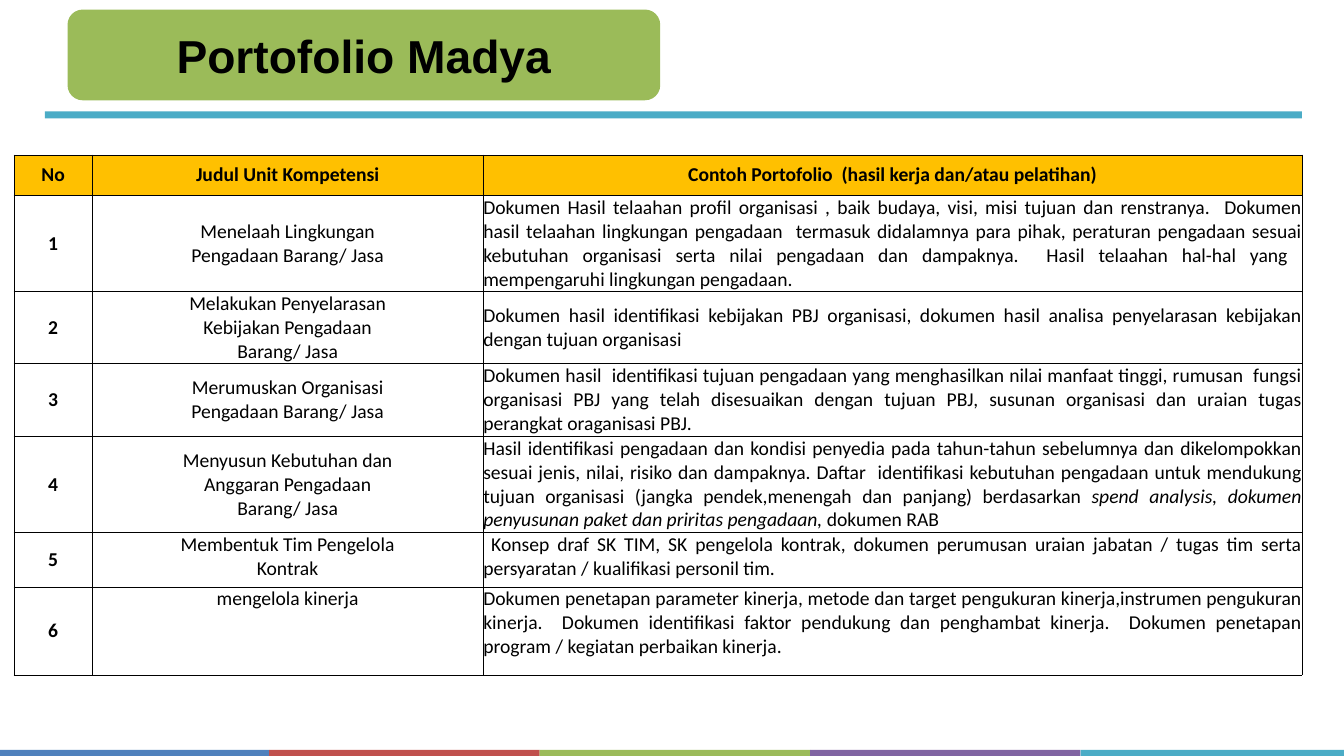
from dataclasses import dataclass

from lxml import etree
from pptx import Presentation
from pptx.dml.color import RGBColor
from pptx.enum.shapes import MSO_SHAPE
from pptx.enum.text import MSO_ANCHOR, PP_ALIGN
from pptx.oxml.ns import qn
from pptx.util import Pt

RECTANGLE, ROUNDED = MSO_SHAPE.RECTANGLE, MSO_SHAPE.ROUNDED_RECTANGLE
TOP, MIDDLE = MSO_ANCHOR.TOP, MSO_ANCHOR.MIDDLE
CENTER, JUSTIFY = PP_ALIGN.CENTER, PP_ALIGN.JUSTIFY


@dataclass(frozen=True)
class Theme:
    title_font: str = "Arial"
    table_font: str = "Calibri"
    title_size: int = 66
    table_size: int = 28
    text: str = "000000"
    header: str = "FFC000"
    blue: str = "4F81BD"
    red: str = "C0504D"
    green: str = "9BBB59"
    purple: str = "8064A2"
    teal: str = "4BACC6"


theme = Theme()


def add_block(kind, left, top, width, height, color):
    shape = slide.shapes.add_shape(kind, Pt(left), Pt(top), Pt(width), Pt(height))
    shape.shadow.inherit = False
    shape.fill.solid()
    shape.fill.fore_color.rgb = RGBColor.from_string(color)
    shape.line.fill.background()
    return shape


def add_run(paragraph, text, font, size, bold=False, italic=False):
    run = paragraph.add_run()
    run.text = text
    run.font.name = font
    run.font.size = Pt(size)
    run.font.bold = bold
    run.font.italic = italic
    run.font.color.rgb = RGBColor.from_string(theme.text)


presentation = Presentation()
presentation.slide_width = Pt(1920)
presentation.slide_height = Pt(1080)
slide = presentation.slides.add_slide(presentation.slide_layouts[6])

strip_width = 386.4
strip_colors = [theme.blue, theme.red, theme.green, theme.purple, theme.teal]
for index, color in enumerate(strip_colors):
    add_block(RECTANGLE, index * strip_width - 2, 1071.4, strip_width, 14.4, color)

add_block(RECTANGLE, 64, 159, 1796, 10, theme.teal)
title = add_block(ROUNDED, 96.5, 13.7, 846.7, 129.6, theme.green)
title.text_frame.vertical_anchor = MIDDLE
title_paragraph = title.text_frame.paragraphs[0]
title_paragraph.alignment = CENTER
add_run(title_paragraph, "Portofolio Madya", theme.title_font, theme.title_size, bold=True)

headings = ["No", "Judul Unit Kompetensi", "Contoh Portofolio  (hasil kerja dan/atau pelatihan)"]
units = [
    (["Menelaah Lingkungan", "Pengadaan Barang/ Jasa"], MIDDLE, MIDDLE, [
        ("Dokumen Hasil telaahan profil organisasi , baik budaya, visi, misi tujuan dan renstranya.  Dokumen\n"
         "hasil telaahan lingkungan pengadaan  termasuk didalamnya para pihak, peraturan pengadaan sesuai "
         "kebutuhan organisasi serta nilai pengadaan dan dampaknya.  Hasil telaahan hal-hal yang  "
         "mempengaruhi lingkungan pengadaan.", False)]),
    (["Melakukan Penyelarasan", "Kebijakan Pengadaan", "Barang/ Jasa"], MIDDLE, MIDDLE, [
        ("Dokumen hasil identifikasi kebijakan PBJ organisasi, dokumen hasil analisa penyelarasan kebijakan\n"
         "dengan tujuan organisasi", False)]),
    (["Merumuskan Organisasi", "Pengadaan Barang/ Jasa"], MIDDLE, MIDDLE, [
        ("Dokumen hasil  identifikasi tujuan pengadaan yang menghasilkan nilai manfaat tinggi, rumusan  fungsi "
         "organisasi PBJ yang telah disesuaikan dengan tujuan PBJ, susunan organisasi dan uraian tugas\n"
         "perangkat oraganisasi PBJ.", False)]),
    (["Menyusun Kebutuhan dan", "Anggaran Pengadaan", "Barang/ Jasa"], MIDDLE, TOP, [
        ("Hasil identifikasi pengadaan dan kondisi penyedia pada tahun-tahun sebelumnya dan dikelompokkan\n"
         "sesuai jenis, nilai, risiko dan dampaknya. Daftar  identifikasi kebutuhan pengadaan untuk mendukung "
         "tujuan organisasi (jangka pendek,menengah dan panjang) berdasarkan ", False),
        ("spend analysis, dokumen\npenyusunan paket dan priritas pengadaan, ", True),
        ("dokumen RAB", False)]),
    (["Membentuk Tim Pengelola", "Kontrak"], TOP, TOP, [
        (" Konsep draf SK TIM, SK pengelola kontrak, dokumen perumusan uraian jabatan / tugas tim serta\n"
         "persyaratan / kualifikasi personil tim.", False)]),
    (["mengelola kinerja"], TOP, TOP, [
        ("Dokumen penetapan parameter kinerja, metode dan target pengukuran kinerja,instrumen pengukuran "
         "kinerja.  Dokumen identifikasi faktor pendukung dan penghambat kinerja.  Dokumen penetapan\n"
         "program / kegiatan perbaikan kinerja.", False)]),
]
column_widths = [112, 558, 1170]
row_heights = [57.6, 134.6, 101.5, 101.5, 134.6, 77.8, 126]

table = slide.shapes.add_table(
    len(row_heights), len(column_widths), Pt(19.8), Pt(221),
    Pt(sum(column_widths)), Pt(sum(row_heights))).table
table.first_row = False
table.horz_banding = False
for column, width in zip(table.columns, column_widths):
    column.width = Pt(width)
for row, height in zip(table.rows, row_heights):
    row.height = Pt(height)

rows = [[(MIDDLE, CENTER, True, [[(heading, False)]]) for heading in headings]]
for number, (name_lines, name_anchor, example_anchor, example) in enumerate(units, 1):
    rows.append([
        (MIDDLE, CENTER, True, [[(str(number), False)]]),
        (name_anchor, CENTER, False, [[(line, False)] for line in name_lines]),
        (example_anchor, JUSTIFY, False, [example]),
    ])

for row_index, row in enumerate(rows):
    for column_index, (anchor, alignment, bold, paragraphs) in enumerate(row):
        cell = table.cell(row_index, column_index)
        cell.vertical_anchor = anchor
        cell.margin_left = cell.margin_right = cell.margin_top = Pt(0.7)
        cell.margin_bottom = Pt(0)
        properties = cell._tc.get_or_add_tcPr()
        for side in ("a:lnL", "a:lnR", "a:lnT", "a:lnB"):
            border = etree.SubElement(properties, qn(side), w=str(Pt(0.5)))
            border_fill = etree.SubElement(border, qn("a:solidFill"))
            etree.SubElement(border_fill, qn("a:srgbClr"), val=theme.text)
        if row_index == 0:
            cell.fill.solid()
            cell.fill.fore_color.rgb = RGBColor.from_string(theme.header)
        else:
            cell.fill.background()
        for paragraph_index, runs in enumerate(paragraphs):
            frame = cell.text_frame
            paragraph = frame.add_paragraph() if paragraph_index else frame.paragraphs[0]
            paragraph.alignment = alignment
            for text, italic in runs:
                for line_index, line in enumerate(text.split("\n")):
                    if line_index:
                        paragraph.add_line_break()
                    add_run(paragraph, line, theme.table_font, theme.table_size, bold, italic)

presentation.save("out.pptx")
